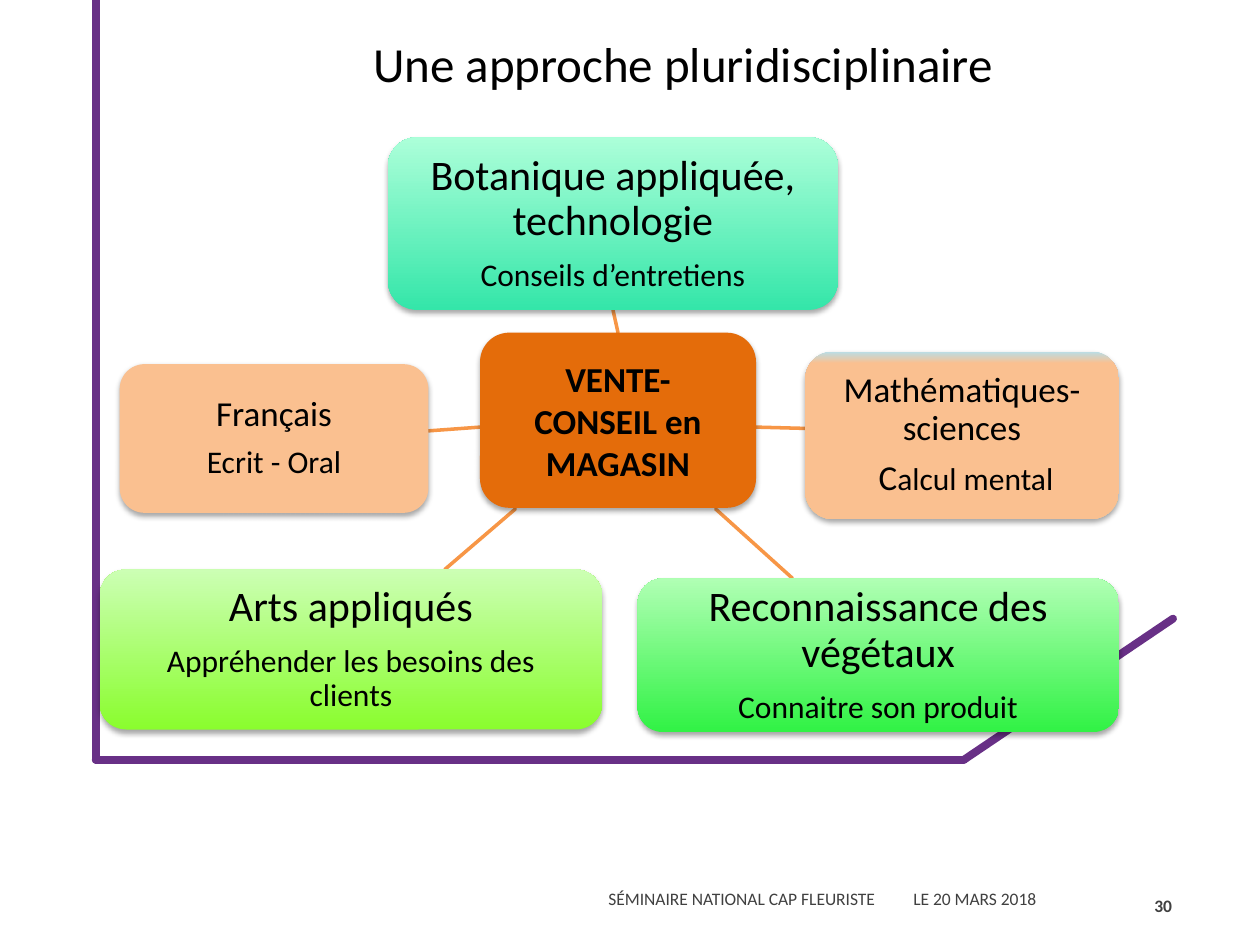
"""Build the slide on a multidisciplinary approach to shop sales and advice."""
from dataclasses import dataclass, field

from lxml import etree
from pptx import Presentation
from pptx.dml.color import RGBColor
from pptx.enum.shapes import MSO_CONNECTOR, MSO_SHAPE
from pptx.enum.text import MSO_ANCHOR, PP_ALIGN
from pptx.oxml.ns import qn
from pptx.util import Inches, Pt

LINE = MSO_CONNECTOR.STRAIGHT
ROUND = MSO_SHAPE.ROUNDED_RECTANGLE
LEFT, MID, RIGHT = PP_ALIGN.LEFT, PP_ALIGN.CENTER, PP_ALIGN.RIGHT
MIDDLE, TOP = MSO_ANCHOR.MIDDLE, MSO_ANCHOR.TOP


@dataclass(frozen=True)
class Theme:
    """Colours, font and type sizes of the slide."""
    font: str = "Calibri"
    ink: str = "000000"
    gray: str = "404040"
    frame: str = "683086"
    link: str = "F79646"
    hub: str = "E46C0A"
    peach: str = "FAC090"
    title: int = 28
    large: int = 24
    head: int = 20
    sub: int = 18
    small: int = 10


THEME = Theme()


@dataclass(frozen=True)
class Run:
    """A piece of text with its look."""
    text: str
    size: int
    color: str = THEME.ink
    bold: bool = False


@dataclass(frozen=True)
class Node:
    """A rounded box with its paragraphs and gradient stops."""
    box: tuple[float, float, float, float]
    lines: list[list[Run]]
    stops: list[tuple[float, str]]
    angle: int = 90
    form: dict = field(default_factory=lambda: {"line_spacing": 0.9})


@dataclass(frozen=True)
class Stroke:
    """A straight line between two points."""
    start: tuple[float, float]
    end: tuple[float, float]
    color: str = THEME.link
    width: float = 2


@dataclass(frozen=True)
class Label:
    """A plain text box."""
    box: tuple[float, float, float, float]
    run: Run
    align: PP_ALIGN
    anchor: MSO_ANCHOR = MIDDLE
    tab: float = 0


def topic(head: str, sub: list[Run], size: int) -> list[list[Run]]:
    """Return a heading paragraph and a detail paragraph."""
    return [[Run(head, size)], sub]


def detail(text: str) -> list[Run]:
    """Return a detail line as one run."""
    return [Run(text, THEME.sub)]


HUB = Node((3.81, 2.64, 2.19, 1.39),
           [[Run("VENTE-CONSEIL en MAGASIN", THEME.head, bold=True)]],
           [(0, THEME.hub)], form={"line_spacing": 1.0})
PLANT = Node((3.08, 1.09, 3.57, 1.37),
             topic("Botanique appliquée, technologie",
                   detail("Conseils d’entretiens"), THEME.large),
             [(0, "34E6A9"), (1, "ACFFD9")])
NODES = [
    Node((5.06, 4.59, 3.82, 1.22),
         topic("Reconnaissance des végétaux",
               detail("Connaitre son produit"), THEME.large),
         [(0, "31F245"), (1, "B0FFB4")]),
    Node((0.79, 4.52, 3.99, 1.27),
         topic("Arts appliqués",
               detail("Appréhender les besoins des clients"), THEME.large),
         [(0, "8AFD2E"), (1, "CCFFB4")]),
    Node((0.95, 2.89, 2.45, 1.18),
         topic("Français", detail("Ecrit - Oral"), THEME.head),
         [(0, THEME.peach)]),
    Node((6.39, 2.79, 2.49, 1.33),
         topic("Mathématiques-sciences",
               [Run(" C", THEME.head), Run("alcul mental", THEME.sub)],
               THEME.head),
         [(0, "B8DEE8"), (0.07, THEME.peach)], 270),
]
FRAME = [Stroke(a, b, THEME.frame, 4.5) for a, b in (
    ((0.76, 6.03), (7.65, 6.03)),
    ((7.65, 6.03), (9.31, 4.91)),
    ((0.76, 6.03), (0.76, 0)))]
STEM = Stroke((4.9, 2.64), (4.87, 2.46))
LINKS = [
    Stroke((5.68, 4.04), (6.29, 4.59)),
    Stroke((4.09, 4.04), (3.53, 4.52)),
    Stroke((3.81, 3.39), (3.4, 3.42)),
    Stroke((6, 3.39), (6.39, 3.4)),
]
LABELS = [
    Label((4.73, 6.93, 3.75, 0.4),
          Run("SÉMINAIRE NATIONAL CAP FLEURISTE\tLE 20 MARS 2018",
              THEME.small, THEME.gray), LEFT, tab=2.42),
    Label((8.96, 6.99, 0.44, 0.4),
          Run("30", THEME.small, THEME.gray, True), RIGHT),
    Label((1.2, 0.22, 8.44, 0.57),
          Run("Une approche pluridisciplinaire", THEME.title), MID, TOP),
]


def apply(item, values: dict) -> None:
    """Set each named attribute of an item."""
    for name, value in values.items():
        setattr(item, name, value)


def write(para, runs: list[Run]) -> None:
    """Add runs to a paragraph."""
    for run in runs:
        part = para.add_run()
        part.text = run.text
        apply(part.font, {"name": THEME.font, "size": Pt(run.size),
                          "bold": run.bold})
        part.font.color.rgb = RGBColor.from_string(run.color)


def shade(shape) -> None:
    """Give a shape a soft shadow below it."""
    shape.shadow.inherit = False
    glow = etree.SubElement(
        shape.element.spPr.find(qn("a:effectLst")), qn("a:outerShdw"),
        blurRad=str(Pt(3.1)), dist=str(Pt(1.8)), dir="5400000", rotWithShape="0")
    tone = etree.SubElement(glow, qn("a:srgbClr"), val=THEME.ink)
    etree.SubElement(tone, qn("a:alpha"), val="35000")


def paint(fill, node: Node) -> None:
    """Fill with one colour or a two-stop gradient."""
    if len(node.stops) == 1:
        fill.solid()
        fill.fore_color.rgb = RGBColor.from_string(node.stops[0][1])
        return
    fill.gradient()
    fill.gradient_angle = node.angle
    for stop, (place, color) in zip(fill.gradient_stops, node.stops):
        stop.position = place
        stop.color.rgb = RGBColor.from_string(color)


def draw_node(slide, node: Node):
    """Draw a rounded box with its text."""
    shape = slide.shapes.add_shape(ROUND, *map(Inches, node.box))
    paint(shape.fill, node)
    shape.line.fill.background()
    shade(shape)
    frame = shape.text_frame
    sides = ("left", "top", "right", "bottom")
    apply(frame, {"word_wrap": True, "vertical_anchor": MIDDLE,
                  **{f"margin_{side}": Inches(0.13) for side in sides}})
    for i, runs in enumerate(node.lines):
        para = frame.add_paragraph() if i else frame.paragraphs[0]
        gap = Pt(runs[0].size * 0.35) if len(node.lines) > 1 else Pt(0)
        apply(para, {"alignment": MID, "space_after": gap, **node.form})
        write(para, runs)
    return shape


def draw_line(slide, stroke: Stroke):
    """Draw a straight line with round ends."""
    line = slide.shapes.add_connector(
        LINE, *map(Inches, stroke.start + stroke.end))
    line.line.color.rgb = RGBColor.from_string(stroke.color)
    line.line.width = Pt(stroke.width)
    props = line.element.spPr
    props.find(qn("a:ln")).set("cap", "rnd")
    etree.SubElement(props, qn("a:effectLst"))
    return line


def draw_label(slide, label: Label) -> None:
    """Draw a text box holding one line."""
    frame = slide.shapes.add_textbox(*map(Inches, label.box)).text_frame
    apply(frame, {"word_wrap": True, "vertical_anchor": label.anchor})
    para = frame.paragraphs[0]
    para.alignment = label.align
    if label.tab:
        tabs = etree.SubElement(para._p.get_or_add_pPr(), qn("a:tabLst"))
        etree.SubElement(tabs, qn("a:tab"), pos=str(Inches(label.tab)), algn="l")
    write(para, [label.run])


def main() -> None:
    """Build and save the slide."""
    deck = Presentation()
    apply(deck, {"slide_width": Inches(10), "slide_height": Inches(7.5)})
    slide = deck.slides.add_slide(deck.slide_layouts[6])
    for stroke in FRAME + LINKS:
        draw_line(slide, stroke)
    stem = draw_line(slide, STEM)
    stem.begin_connect(draw_node(slide, HUB), 0)
    stem.end_connect(draw_node(slide, PLANT), 2)
    for node in NODES:
        draw_node(slide, node)
    for label in LABELS:
        draw_label(slide, label)
    deck.save("out.pptx")


if __name__ == "__main__":
    main()
